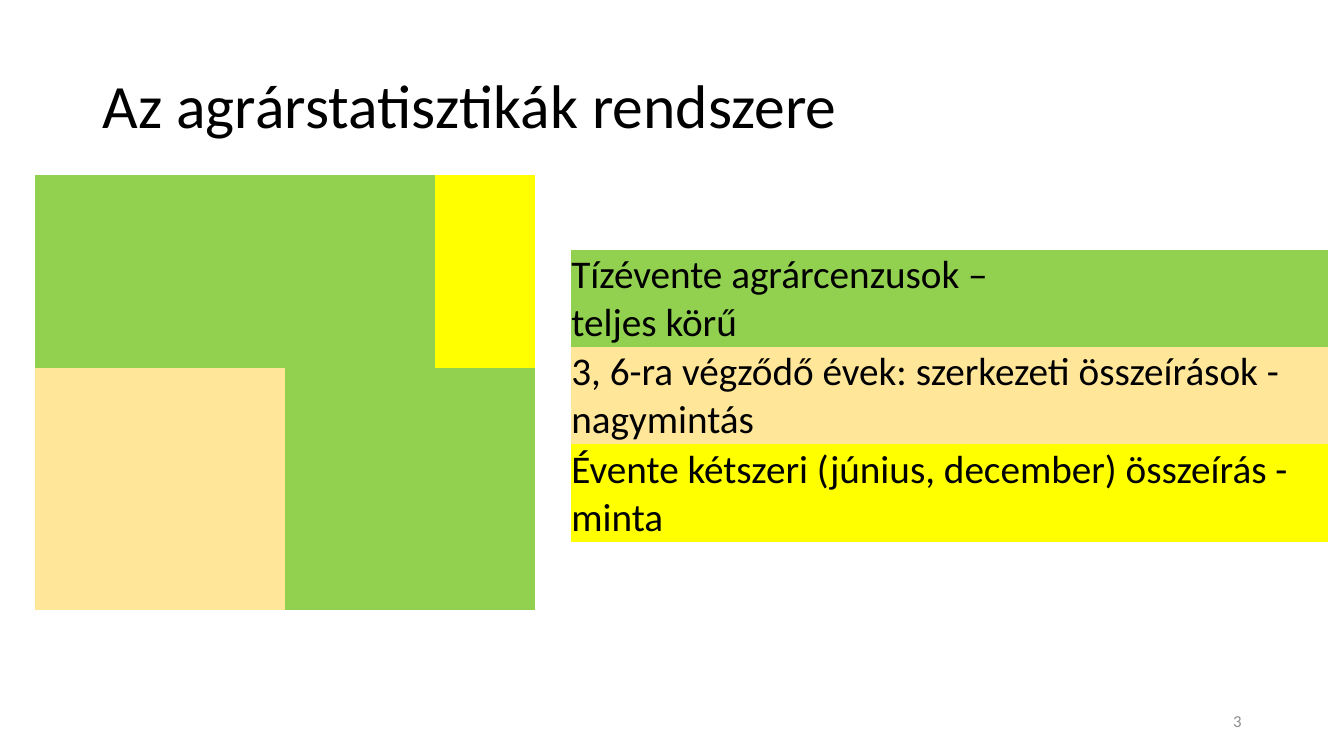
import pptx
import pptx.dml.color
import pptx.enum.text
import pptx.util

Cm = pptx.util.Cm
Pt = pptx.util.Pt
RGB = pptx.dml.color.RGBColor
ALIGN = pptx.enum.text.PP_ALIGN
ANCHOR = pptx.enum.text.MSO_ANCHOR

BLACK = RGB(0x00, 0x00, 0x00)
GRAY = RGB(0x8C, 0x8C, 0x8C)
GREEN = RGB(0x92, 0xD0, 0x50)
SAND = RGB(0xFF, 0xE6, 0x99)
YELLOW = RGB(0xFF, 0xFF, 0x00)

PLAIN = "{2D5ABB26-0587-4C30-8999-92F81FD0307C}"
ROWS, COLS = 9, 10
LEGEND = [
    ("Tízévente agrárcenzusok –\nteljes körű", GREEN),
    ("3, 6-ra végződő évek: szerkezeti összeírások - nagymintás", SAND),
    ("Évente kétszeri (június, december) összeírás - minta", YELLOW),
]


def apply(item, values):
    for name, value in values.items():
        setattr(item, name, value)


def write(frame, text, size, color, align=ALIGN.LEFT, space=1.0):
    frame.text = text
    for para in frame.paragraphs:
        apply(para, {"alignment": align, "line_spacing": space})
        apply(para.font, {"name": "Calibri", "size": Pt(size)})
        para.font.color.rgb = color


def paint(cell, color):
    cell.fill.solid()
    cell.fill.fore_color.rgb = color


def add_grid(slide, rows, cols, left, top, width, height):
    shape = slide.shapes.add_table(
        rows, cols, Cm(left), Cm(top), Cm(width), Cm(height))
    table = shape.table
    apply(table, {"first_row": False, "horz_banding": False})
    for style in shape.element.xpath(".//a:tableStyleId"):
        style.text = PLAIN
    return table


def add_title(slide, left, top, width, height):
    title = slide.shapes.title
    apply(title, {"left": Cm(left), "top": Cm(top),
                  "width": Cm(width), "height": Cm(height)})
    frame = title.text_frame
    frame.vertical_anchor = ANCHOR.MIDDLE
    write(frame, "Az agrárstatisztikák rendszere", 44, BLACK, space=0.9)


def add_map(slide, left, top, width, height):
    table = add_grid(slide, ROWS, COLS, left, top, width, height)
    for row in range(ROWS):
        for col in range(COLS):
            if row < 4:
                color = GREEN if col < 8 else YELLOW
            else:
                color = SAND if col < 5 else GREEN
            paint(table.cell(row, col), color)


def add_legend(slide, left, top, width, height):
    table = add_grid(slide, len(LEGEND), 1, left, top, width, height)
    for row, (text, color) in enumerate(LEGEND):
        cell = table.cell(row, 0)
        apply(cell, {"margin_left": Cm(0.02), "margin_right": Cm(0.02),
                     "margin_top": Cm(0.02), "margin_bottom": 0,
                     "vertical_anchor": ANCHOR.BOTTOM})
        paint(cell, color)
        write(cell.text_frame, text, 28, BLACK)


def add_number(slide, left, top, width, height):
    box = slide.shapes.add_textbox(Cm(left), Cm(top), Cm(width), Cm(height))
    frame = box.text_frame
    apply(frame, {"word_wrap": True, "vertical_anchor": ANCHOR.MIDDLE})
    write(frame, "3", 12, GRAY, ALIGN.RIGHT)


def main():
    deck = pptx.Presentation()
    apply(deck, {"slide_width": Cm(33.87), "slide_height": Cm(19.05)})
    slide = deck.slides.add_slide(deck.slide_layouts[5])
    add_title(slide, 2.33, 0.9, 29.21, 3.68)
    add_number(slide, 23.92, 17.66, 7.62, 1.01)
    add_map(slide, 0.89, 4.4, 12.6, 10.98)
    add_legend(slide, 14.38, 6.3, 19.08, 7.35)
    deck.save("out.pptx")


if __name__ == "__main__":
    main()
